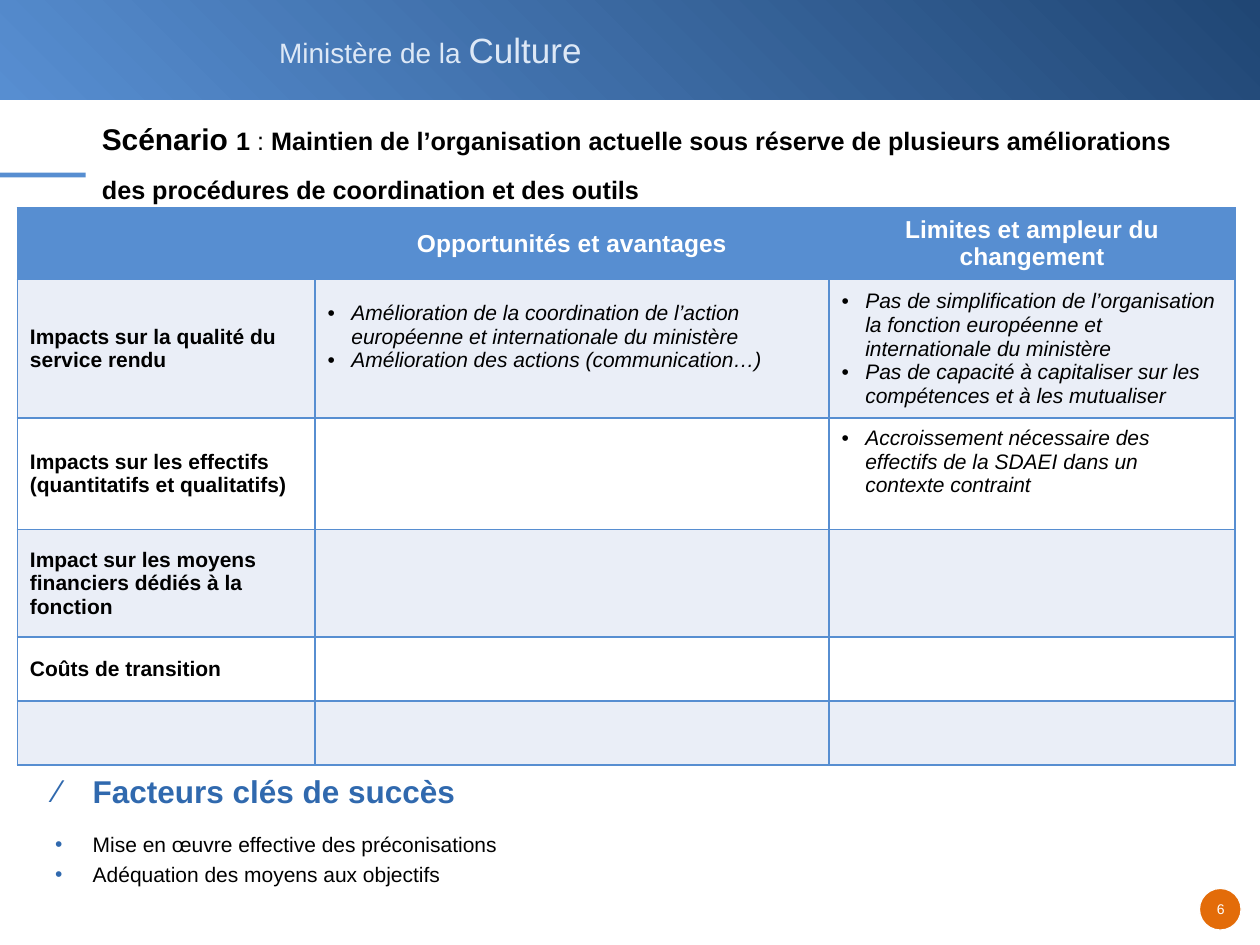
"""Builds the slide on scenario 1 with its impact table and success factors."""
from lxml.etree import SubElement
from pptx import Presentation
from pptx.dml.color import RGBColor
from pptx.enum.shapes import MSO_SHAPE
from pptx.enum.text import MSO_ANCHOR, MSO_AUTO_SIZE, PP_ALIGN
from pptx.oxml.ns import qn
from pptx.util import Cm, Pt

BLUE, DARK_BLUE, HEADING_BLUE = "578ED1", "204674", "3069AE"
PALE, STRIPE, ORANGE = "DDE8F6", "EAEEF7", "E36C09"
WHITE, BLACK = "FFFFFF", "000000"


def rgb(value):
    return RGBColor.from_string(value)


class SlideBuilder:
    def __init__(self, slide, font="Arial"):
        self.slide = slide
        self.font = font

    def style(self, font, size, color, bold=False, italic=False):
        font.name, font.size = self.font, Pt(size)
        font.bold, font.italic = bold, italic
        font.color.rgb = rgb(color)

    def bullet(self, paragraph, char, indent, color=None):
        properties = paragraph._p.get_or_add_pPr()
        properties.set("marL", str(Cm(indent)))
        properties.set("indent", str(-Cm(indent)))
        if color:
            bullet_color = SubElement(properties, qn("a:buClr"))
            SubElement(bullet_color, qn("a:srgbClr"), val=color)
        SubElement(properties, qn("a:buFont"), typeface=self.font)
        SubElement(properties, qn("a:buChar"), char=char)

    def shape(self, kind, left, top, width, height, fill, line=None):
        shape = self.slide.shapes.add_shape(
            kind, Cm(left), Cm(top), Cm(width), Cm(height))
        shape.shadow.inherit = False
        if isinstance(fill, tuple):
            shape.fill.gradient()
            shape.fill.gradient_angle = 225
            for stop, color in zip(shape.fill.gradient_stops, fill):
                stop.color.rgb = rgb(color)
        else:
            shape.fill.solid()
            shape.fill.fore_color.rgb = rgb(fill)
        if line:
            shape.line.color.rgb = rgb(line)
            shape.line.width = Pt(0.75)
        else:
            shape.line.fill.background()

    def text(self, left, top, width, height, wrap=False):
        box = self.slide.shapes.add_textbox(
            Cm(left), Cm(top), Cm(width), Cm(height))
        box.text_frame.word_wrap = wrap
        return box.text_frame

    def runs(self, paragraph, parts):
        for words, size, bold in parts:
            run = paragraph.add_run()
            run.text = words
            run.font.size, run.font.bold = Pt(size), bold

    def title(self, left, top, width, height, parts):
        title = self.slide.shapes.title
        title.left, title.top = Cm(left), Cm(top)
        title.width, title.height = Cm(width), Cm(height)
        frame = title.text_frame
        frame.auto_size = MSO_AUTO_SIZE.NONE
        frame.vertical_anchor = MSO_ANCHOR.TOP
        paragraph = frame.paragraphs[0]
        paragraph.alignment = PP_ALIGN.LEFT
        paragraph.line_spacing = Pt(28)
        self.style(paragraph.font, 14.4, BLACK)
        self.runs(paragraph, parts)

    def cell(self, cell, content, fill, header):
        properties = cell._tc.get_or_add_tcPr()
        for side in ("a:lnL", "a:lnR", "a:lnT", "a:lnB"):
            border = SubElement(properties, qn(side), w=str(Pt(1)))
            solid = SubElement(border, qn("a:solidFill"))
            SubElement(solid, qn("a:srgbClr"), val=BLUE)
        cell.fill.solid()
        cell.fill.fore_color.rgb = rgb(fill)
        cell.vertical_anchor = MSO_ANCHOR.MIDDLE
        bulleted = isinstance(content, list)
        lines = content if bulleted else [content]
        cell.text = "\n".join(lines)
        for paragraph in cell.text_frame.paragraphs:
            if bulleted:
                self.bullet(paragraph, "•", 0.48)
            if header:
                paragraph.alignment = PP_ALIGN.CENTER
            self.style(paragraph.font, 14 if header else 12,
                       WHITE if header else BLACK, not bulleted, bulleted)

    def table(self, left, top, widths, heights, rows):
        table = self.slide.shapes.add_table(
            len(heights), len(widths), Cm(left), Cm(top),
            Cm(sum(widths)), Cm(sum(heights))).table
        for column, width in zip(table.columns, widths):
            column.width = Cm(width)
        for r, (height, contents) in enumerate(zip(heights, rows)):
            table.rows[r].height = Cm(height)
            fill = BLUE if r == 0 else STRIPE if r % 2 else WHITE
            for c, content in enumerate(contents):
                self.cell(table.cell(r, c), content, fill, r == 0)
        return table


def main():
    presentation = Presentation()
    presentation.slide_width, presentation.slide_height = Cm(25.4), Cm(19.05)
    builder = SlideBuilder(
        presentation.slides.add_slide(presentation.slide_layouts[5]))

    builder.shape(MSO_SHAPE.RECTANGLE, 0, 0, 25.4, 2.01, (DARK_BLUE, BLUE))
    ministry = builder.text(5.38, 0.46, 6.68, 1.12).paragraphs[0]
    builder.style(ministry.font, 16, PALE)
    builder.runs(ministry, [("Ministère de la ", 16, False),
                            ("Culture", 20, False)])
    builder.shape(MSO_SHAPE.RECTANGLE, 0, 3.48, 1.73, 0.1, BLUE)

    builder.shape(MSO_SHAPE.OVAL, 24.18, 17.91, 0.84, 0.84, ORANGE, WHITE)
    page = builder.text(24.23, 18.03, 0.76, 0.58)
    page.margin_left = page.margin_right = Cm(0.13)
    number = page.paragraphs[0]
    number.text = "6"
    number.alignment = PP_ALIGN.CENTER
    builder.style(number.font, 8, WHITE)

    factors = builder.text(0.86, 15.54, 22.58, 2.9, wrap=True)
    factors.text = "\n".join(["Facteurs clés de succès",
                              "Mise en œuvre effective des préconisations",
                              "Adéquation des moyens aux objectifs"])
    heading, *items = factors.paragraphs
    builder.bullet(heading, "⁄", 0.76, HEADING_BLUE)
    heading.line_spacing, heading.space_after = Pt(19), Pt(12)
    builder.style(heading.font, 18, HEADING_BLUE, bold=True)
    for item in items:
        builder.bullet(item, "•", 0.76, HEADING_BLUE)
        item.space_after = Pt(3)
        builder.style(item.font, 12, BLACK)

    builder.title(1.8, 2.03, 22.56, 2.06, [
        ("Scénario ", 17.1, True), ("1 ", 14.4, True), (": ", 14.4, False),
        ("Maintien de l’organisation actuelle sous réserve de plusieurs "
         "améliorations des procédures de coordination et des outils",
         14.4, True)])

    impacts = builder.table(
        0.35, 4.19, [6, 10.36, 8.19], [1.37, 2.64, 2.16, 2.16, 1.29, 1.29], [
            ("", "Opportunités et avantages",
             "Limites et ampleur du changement"),
            ("Impacts sur la qualité du service rendu",
             ["Amélioration de la coordination de l’action européenne et "
              "internationale du ministère",
              "Amélioration des actions (communication…)"],
             ["Pas de simplification de l’organisation la fonction "
              "européenne et internationale du ministère",
              "Pas de capacité à capitaliser sur les compétences et à les "
              "mutualiser"]),
            ("Impacts sur les effectifs (quantitatifs et qualitatifs)", "",
             ["Accroissement nécessaire des effectifs de la SDAEI dans un "
              "contexte contraint"]),
            ("Impact sur les moyens financiers dédiés à la fonction", "", ""),
            ("Coûts de transition", "", ""),
            ("", "", "")])
    for row, column in ((1, 1), (2, 2)):
        impacts.cell(row, column).margin_bottom = Cm(0.6)

    presentation.save("out.pptx")


if __name__ == "__main__":
    main()
